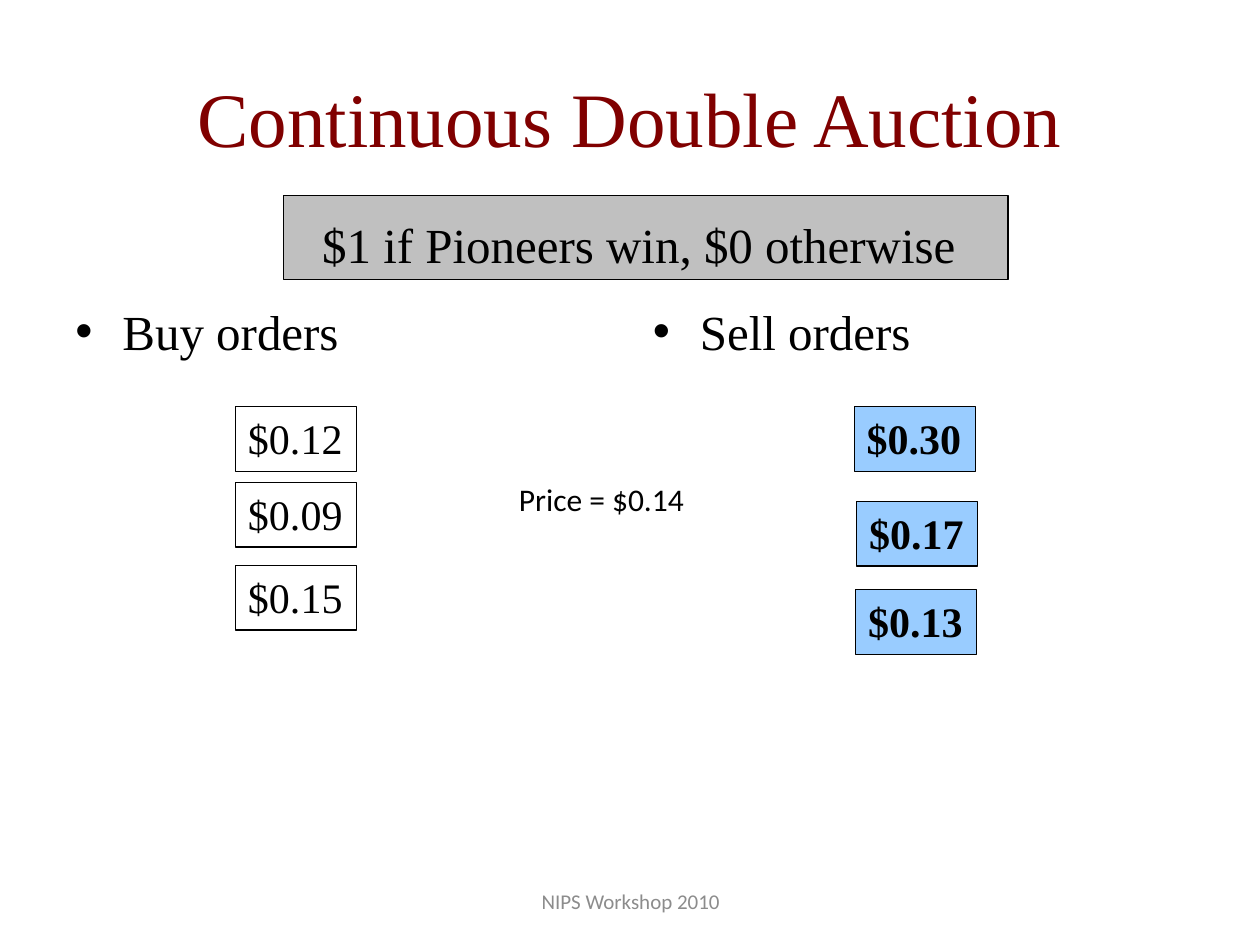
from dataclasses import dataclass

from lxml import etree
from pptx import Presentation
from pptx.dml.color import RGBColor
from pptx.enum.shapes import MSO_SHAPE
from pptx.enum.text import MSO_ANCHOR, PP_ALIGN
from pptx.oxml.ns import qn
from pptx.util import Cm, Pt

RECT = MSO_SHAPE.RECTANGLE
TOP, MIDDLE = MSO_ANCHOR.TOP, MSO_ANCHOR.MIDDLE
LEFT, CENTER = PP_ALIGN.LEFT, PP_ALIGN.CENTER


@dataclass(frozen=True)
class Theme:
    serif: str = "Times New Roman"
    sans: str = "Calibri"
    ink: str = "000000"
    title: str = "800000"
    muted: str = "8C8C8C"
    buy: str = "FFFFFF"
    sell: str = "99CCFF"
    banner: str = "C0C0C0"
    huge: int = 44
    large: int = 28
    order: int = 24
    price: int = 18
    small: int = 12
    line: float = 0.75


THEME = Theme()


def write(shape, text, size, font=THEME.serif, color=THEME.ink,
          bold=False, align=LEFT, **frame):
    """Put one formatted line of text in a shape."""
    body = shape.text_frame
    layout = {"word_wrap": True, "vertical_anchor": TOP, **frame}
    for name, value in layout.items():
        setattr(body, name, value)
    line = body.paragraphs[0]
    line.alignment = align
    run = line.add_run()
    run.text = text
    for name, value in {"name": font, "size": Pt(size), "bold": bold}.items():
        setattr(run.font, name, value)
    run.font.color.rgb = RGBColor.from_string(color)
    return line


def add_label(slide, area, text, size, **style):
    box = slide.shapes.add_textbox(*map(Cm, area))
    return write(box, text, size, **style)


def add_bullet(slide, area, text):
    # The top inset leaves room for the banner above the heading
    line = add_label(slide, area, text, THEME.large, margin_top=Cm(1.63))
    props = line._p.get_or_add_pPr()
    props.set("marL", str(Cm(0.95)))
    props.set("indent", str(-Cm(0.95)))
    etree.SubElement(props, qn("a:buFont"), typeface="Arial")
    etree.SubElement(props, qn("a:buChar"), char="•")


def add_box(slide, area, fill, text, size, **style):
    box = slide.shapes.add_shape(RECT, *map(Cm, area))
    box.shadow.inherit = False
    box.fill.solid()
    box.fill.fore_color.rgb = RGBColor.from_string(fill)
    box.line.color.rgb = RGBColor.from_string(THEME.ink)
    box.line.width = Pt(THEME.line)
    write(box, text, size, **style)


def add_orders(slide, fill, bold, orders):
    for left, top, price in orders:
        add_box(slide, (left, top, 2.44, 1.3), fill, price, THEME.order,
                bold=bold, word_wrap=False)


def main():
    deck = Presentation()
    deck.slide_width, deck.slide_height = Cm(25.4), Cm(19.05)
    slide = deck.slides.add_slide(deck.slide_layouts[6])

    # Title
    add_label(slide, (1.27, 0.76, 22.86, 3.18), "Continuous Double Auction",
              THEME.huge, color=THEME.title, align=CENTER,
              vertical_anchor=MIDDLE)

    # Column headings
    for left, text in ((1.27, "Buy orders"), (12.91, "Sell orders")):
        add_bullet(slide, (left, 4.45, 11.22, 12.57), text)

    # Orders on each side
    add_orders(slide, THEME.buy, False, [
        (4.75, 8.2, "$0.12"), (4.75, 9.73, "$0.09"), (4.75, 11.4, "$0.15")])
    add_orders(slide, THEME.sell, True, [
        (17.22, 8.2, "$0.30"), (17.27, 10.11, "$0.17"),
        (17.25, 11.89, "$0.13")])

    # Contract banner
    add_box(slide, (5.72, 3.94, 14.6, 1.7), THEME.banner,
            "$1 if Pioneers win, $0 otherwise", THEME.large, align=CENTER,
            margin_top=Cm(0.39), margin_right=Cm(0.53))

    # Price and footer
    add_label(slide, (10.21, 9.55, 3.86, 1.02), "Price = $0.14", THEME.price,
              font=THEME.sans)
    add_label(slide, (8.69, 17.65, 8.05, 1.02), "NIPS Workshop 2010",
              THEME.small, font=THEME.sans, color=THEME.muted, align=CENTER,
              vertical_anchor=MIDDLE)

    deck.save("out.pptx")


if __name__ == "__main__":
    main()
